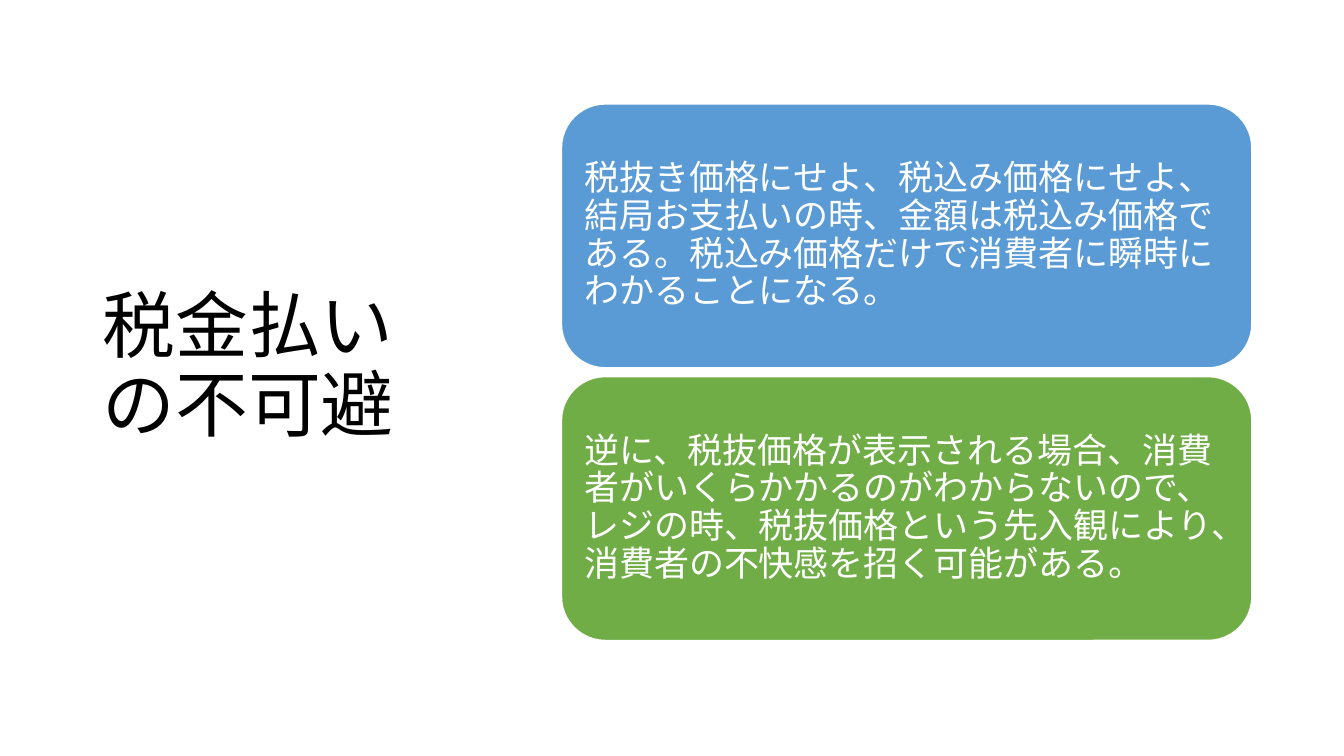
"""Build a slide with a title on the left and two stacked message cards on the right."""
from pptx import Presentation
from pptx.dml.color import RGBColor
from pptx.enum.shapes import MSO_SHAPE
from pptx.enum.text import MSO_ANCHOR, PP_ALIGN
from pptx.util import Cm, Pt

TITLE = "税金払いの不可避"
MESSAGES = [
    ("税抜き価格にせよ、税込み価格にせよ、結局お支払いの時、金額は税込み価格である。"
     "税込み価格だけで消費者に瞬時にわかることになる。", "blue"),
    ("逆に、税抜価格が表示される場合、消費者がいくらかかるのがわからないので、"
     "レジの時、税抜価格という先入観により、消費者の不快感を招く可能がある。", "green"),
]
THEME = {
    "font": "Calibri",
    "title_size": Pt(52),
    "message_size": Pt(25),
    "black": RGBColor(0x00, 0x00, 0x00),
    "white": RGBColor(0xFF, 0xFF, 0xFF),
    "blue": RGBColor(0x5B, 0x9B, 0xD5),
    "green": RGBColor(0x70, 0xAD, 0x47),
}
CARD_LEFT, CARD_TOP, CARD_WIDTH, CARD_HEIGHT = Cm(14.15), Cm(2.62), Cm(17.4), Cm(6.65)
CARD_GAP = Cm(0.22)


def write(shape, text, size, color):
    """Set one left-aligned, vertically centred paragraph."""
    frame = shape.text_frame
    frame.word_wrap = True
    frame.vertical_anchor = MSO_ANCHOR.MIDDLE
    frame.margin_left = frame.margin_right = Cm(0.25)
    paragraph = frame.paragraphs[0]
    paragraph.text = text
    paragraph.alignment = PP_ALIGN.LEFT
    paragraph.line_spacing = 0.9
    paragraph.font.name = THEME["font"]
    paragraph.font.size = THEME[size]
    paragraph.font.color.rgb = THEME[color]
    return paragraph


def main():
    """Lay out the slide and save it."""
    deck = Presentation()
    deck.slide_width, deck.slide_height = Cm(33.87), Cm(19.05)
    slide = deck.slides.add_slide(deck.slide_layouts[6])

    title = slide.shapes.add_textbox(Cm(2.34), Cm(1.55), Cm(9.37), Cm(15.47))
    write(title, TITLE, "title_size", "black")

    for row, (message, fill) in enumerate(MESSAGES):
        top = CARD_TOP + row * (CARD_HEIGHT + CARD_GAP)
        card = slide.shapes.add_shape(
            MSO_SHAPE.ROUNDED_RECTANGLE, CARD_LEFT, top, CARD_WIDTH, CARD_HEIGHT)
        card.shadow.inherit = False
        card.fill.solid()
        card.fill.fore_color.rgb = THEME[fill]
        card.line.color.rgb = THEME["white"]
        card.line.width = Pt(1)
        write(card, message, "message_size", "white").space_after = Pt(9)

    deck.save("out.pptx")


if __name__ == "__main__":
    main()
